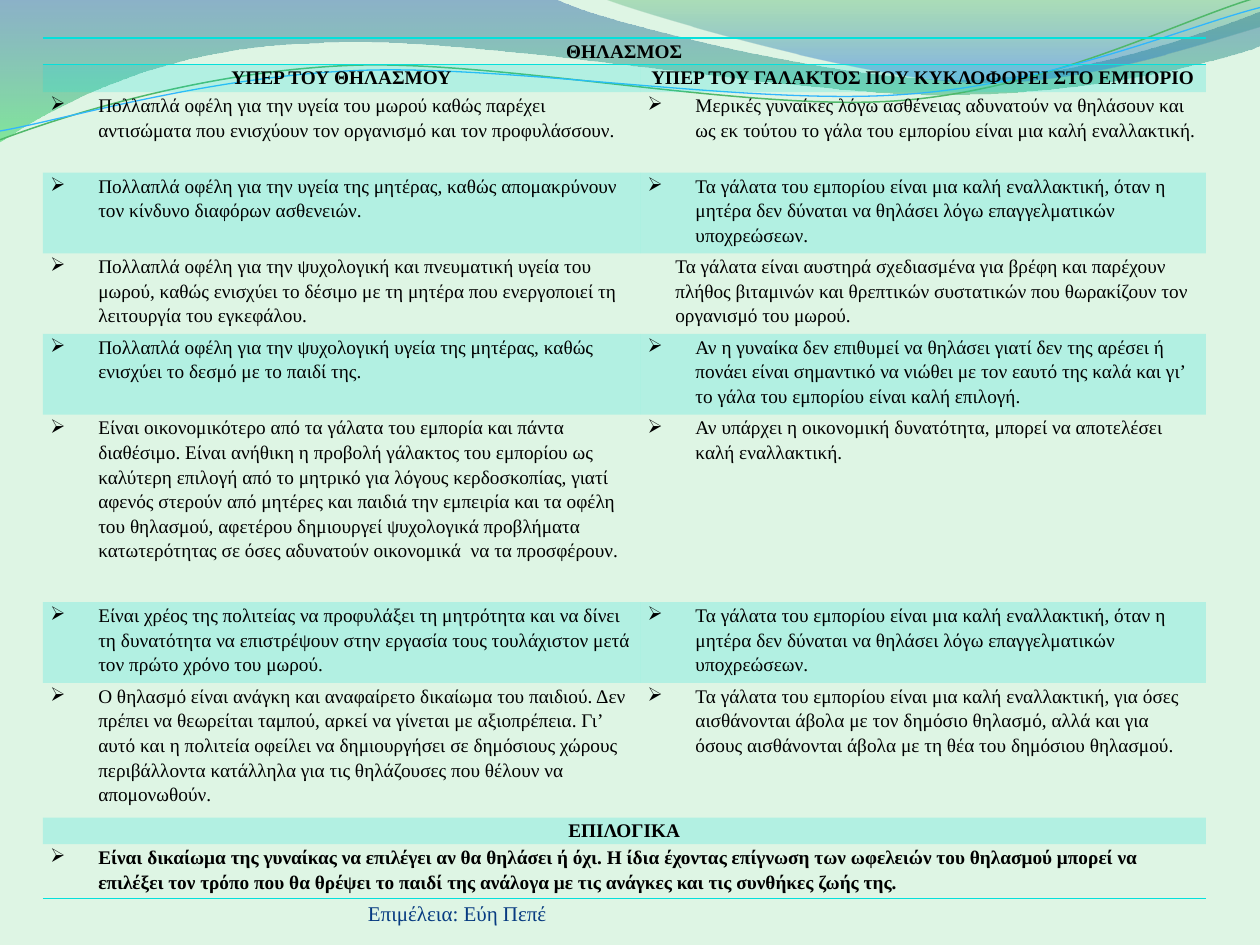
from pptx import Presentation, util as u
from pptx.dml.color import RGBColor
from pptx.enum import text
from pptx.oxml import parse_xml
from pptx.oxml.ns import nsdecls
from lxml import etree

FACE = "Times New Roman"
CYAN = "05E0DB"
NS = "{http://schemas.openxmlformats.org/drawingml/2006/main}"
PLAIN = "{2D5ABB26-0587-4C30-8999-92F81FD0307C}"  # no style, no grid

# Table rows: height, left text, right text (None = one merged cell)
ROWS = [
    (0.21, "ΘΗΛΑΣΜΟΣ", None),
    (0.22, "ΥΠΕΡ ΤΟΥ ΘΗΛΑΣΜΟΥ", "ΥΠΕΡ ΤΟΥ ΓΑΛΑΚΤΟΣ ΠΟΥ ΚΥΚΛΟΦΟΡΕΙ ΣΤΟ ΕΜΠΟΡΙΟ"),
    (0.64, "Πολλαπλά οφέλη για την υγεία του μωρού καθώς παρέχει αντισώματα που "
           "ενισχύουν τον οργανισμό και τον προφυλάσσουν.",
     "Μερικές γυναίκες λόγω ασθένειας αδυνατούν να θηλάσουν και ως εκ τούτου το "
     "γάλα του εμπορίου είναι μια καλή εναλλακτική."),
    (0.64, "Πολλαπλά οφέλη για την υγεία της μητέρας, καθώς απομακρύνουν τον "
           "κίνδυνο διαφόρων ασθενειών.",
     "Τα γάλατα του εμπορίου είναι μια καλή εναλλακτική, όταν η μητέρα δεν "
     "δύναται να θηλάσει λόγω επαγγελματικών υποχρεώσεων."),
    (0.64, "Πολλαπλά οφέλη για την ψυχολογική και πνευματική υγεία του μωρού, "
           "καθώς ενισχύει το δέσιμο με τη μητέρα που ενεργοποιεί τη λειτουργία "
           "του εγκεφάλου.",
     "Τα γάλατα είναι αυστηρά σχεδιασμένα για βρέφη και παρέχουν πλήθος βιταμινών "
     "και θρεπτικών συστατικών που θωρακίζουν τον οργανισμό του μωρού."),
    (0.64, "Πολλαπλά οφέλη για την ψυχολογική υγεία της μητέρας, καθώς ενισχύει "
           "το δεσμό με το παιδί της.",
     "Αν η γυναίκα δεν επιθυμεί να θηλάσει γιατί δεν της αρέσει ή πονάει είναι "
     "σημαντικό να νιώθει με τον εαυτό της καλά και γι’ το γάλα του εμπορίου "
     "είναι καλή επιλογή."),
    (1.49, "Είναι οικονομικότερο από τα γάλατα του εμπορία και πάντα διαθέσιμο. "
           "Είναι ανήθικη η προβολή γάλακτος του εμπορίου ως καλύτερη επιλογή από "
           "το μητρικό για λόγους κερδοσκοπίας, γιατί αφενός στερούν από μητέρες "
           "και παιδιά την εμπειρία και τα οφέλη του θηλασμού, αφετέρου δημιουργεί "
           "ψυχολογικά προβλήματα κατωτερότητας σε όσες αδυνατούν οικονομικά  να "
           "τα προσφέρουν.",
     "Αν υπάρχει η οικονομική δυνατότητα, μπορεί να αποτελέσει καλή εναλλακτική."),
    (0.64, "Είναι χρέος της πολιτείας να προφυλάξει τη μητρότητα και να δίνει τη "
           "δυνατότητα να επιστρέψουν στην εργασία τους τουλάχιστον μετά τον πρώτο "
           "χρόνο του μωρού.",
     "Τα γάλατα του εμπορίου είναι μια καλή εναλλακτική, όταν η μητέρα δεν "
     "δύναται να θηλάσει λόγω επαγγελματικών υποχρεώσεων."),
    (1.07, "Ο θηλασμό είναι ανάγκη και αναφαίρετο δικαίωμα του παιδιού. Δεν πρέπει "
           "να θεωρείται ταμπού, αρκεί να γίνεται με αξιοπρέπεια. Γι’ αυτό και η "
           "πολιτεία οφείλει να δημιουργήσει σε δημόσιους χώρους περιβάλλοντα "
           "κατάλληλα για τις θηλάζουσες που θέλουν να απομονωθούν.",
     "Τα γάλατα του εμπορίου είναι μια καλή εναλλακτική, για όσες αισθάνονται "
     "άβολα με τον δημόσιο θηλασμό, αλλά και για όσους αισθάνονται άβολα με τη "
     "θέα του δημόσιου θηλασμού."),
    (0.21, "ΕΠΙΛΟΓΙΚΑ", None),
    (0.43, "Είναι δικαίωμα της γυναίκας να επιλέγει αν θα θηλάσει ή όχι. Η ίδια "
           "έχοντας επίγνωση των ωφελειών του θηλασμού μπορεί να επιλέξει τον "
           "τρόπο που θα θρέψει το παιδί της ανάλογα με τις ανάγκες και τις "
           "συνθήκες ζωής της.", None),
]
HEADS = (0, 1, 9)
BOLD = HEADS + (10,)
NO_MARK = (4, 1)
TABBED = [(row, 0) for row in range(5, 9)]
EDGES = {0: ("lnT", "lnB"), 10: ("lnB",)}

# Waves: a pair is a straight step, six numbers are a curve
BANDS = [
    ([(0, 0), (4.4, -0.01), (4.76, 0.17, 6.64, 0.63, 7.58, 0.63),
      (8.53, 0.63, 9.58, 0.26, 10, 0.09), (10.01, 0.36),
      (9.83, 0.44, 8.7, 0.76, 7.46, 0.75), (6.22, 0.75, 3.82, 0.28, 2.57, 0.34),
      (1.29, 0.36, 0.46, 0.83, -0.01, 1.13), (0, 0)],
     [(0, "2960A7", 45), (1, "35DA5E", 55)]),
    ([(4.79, -0.01), (5.09, 0.11, 6.82, 0.62, 7.69, 0.65),
      (8.56, 0.69, 9.61, 0.32, 10, 0.21), (10, 0), (4.79, -0.01)],
     [(0, "36A752", 30), (0.8, "2472D3", 45)]),
]
LINES = [
    ([(0, 1.11), (0.48, 0.93, 1.58, 0.57, 2.77, 0.52),
      (3.95, 0.47, 5.93, 0.89, 7.13, 0.8), (8.33, 0.71, 9.38, 0.15, 9.98, -0.02)],
     "50B86A", 0.85),
    ([(0, 1.04), (0.47, 0.96, 1.64, 0.61, 2.83, 0.56),
      (4.03, 0.51, 5.97, 0.84, 7.17, 0.75), (8.36, 0.67, 9.41, 0.21, 10, 0.06)],
     "31B6FD", 0.75),
]


def color(code):
    return RGBColor.from_string(code)


def fade(node, part):
    """Set the opacity, in percent, of the colour inside a fill or stop."""
    etree.SubElement(node.find(f".//{NS}srgbClr"), NS + "alpha", val=str(part * 1000))


def wave(slide, steps, close):
    """Join the end points of the steps, then bend the curved ones."""
    dots = [[u.Inches(v) for v in step[-2:]] for step in steps]
    pen = slide.shapes.build_freeform(*dots[0])
    pen.add_line_segments(dots[1:], close=close)
    shape = pen.convert_to_shape()
    shape.shadow.inherit = False
    for node, step in zip(list(shape._element.spPr.iter(NS + "lnTo")), steps[1:]):
        if len(step) == 6:
            bend = etree.Element(NS + "cubicBezTo")
            for x, y in zip(step[::2], step[1::2]):
                etree.SubElement(bend, NS + "pt", x=str(u.Inches(x) - shape.left),
                                 y=str(u.Inches(y) - shape.top))
            node.getparent().replace(node, bend)
    return shape


def band(slide, steps, stops):
    shape = wave(slide, steps, True)
    shape.line.fill.background()
    shape.fill.gradient()
    shape.fill.gradient_angle = 270
    nodes = shape._element.spPr.iter(NS + "gs")
    for stop, node, (spot, code, part) in zip(shape.fill.gradient_stops, nodes, stops):
        stop.position = spot
        stop.color.rgb = color(code)
        fade(node, part)


def line(slide, steps, code, width):
    shape = wave(slide, steps, False)
    shape.fill.background()
    shape.line.color.rgb = color(code)
    shape.line.width = u.Pt(width)


def write(para, words, code, **style):
    run = para.add_run()
    run.text = words
    for key, value in {"name": FACE, **style}.items():
        setattr(run.font, key, value)
    run.font.color.rgb = color(code)


def inset(frame, side):
    for key, value in {"margin_left": side, "margin_right": side,
                       "margin_top": 0, "margin_bottom": 0}.items():
        setattr(frame, key, u.Inches(value))


def edge(cell, names):
    for i, name in enumerate(("lnL", "lnR", "lnT", "lnB")):
        paint = (f'<a:solidFill><a:srgbClr val="{CYAN}"/></a:solidFill>'
                 '<a:prstDash val="solid"/>' if name in names else "<a:noFill/>")
        cell._tc.get_or_add_tcPr().insert(i, parse_xml(
            f'<a:{name} {nsdecls("a")} w="12700" cmpd="sng">{paint}</a:{name}>'))


def fill(cell, shade):
    if shade:
        cell.fill.solid()
        cell.fill.fore_color.rgb = color(CYAN)
        fade(cell._tc.tcPr, 20)
    else:
        cell.fill.background()


def mark(props, tab):
    etree.SubElement(props, NS + "buFont", typeface="Wingdings", charset="2")
    etree.SubElement(props, NS + "buChar", char="Ø")
    if tab:
        tabs = etree.SubElement(props, NS + "tabLst")
        etree.SubElement(tabs, NS + "tab", pos=str(u.Inches(0.2)), algn="l")


def entry(cell, words, spot):
    para = cell.text_frame.paragraphs[0]
    para.line_spacing = 1.15
    props = para._p.get_or_add_pPr()
    if spot[0] in HEADS:
        para.alignment = text.PP_ALIGN.CENTER
    elif spot == NO_MARK:
        props.set("marL", str(u.Inches(0.22)))
    else:
        props.set("marL", str(u.Inches(0.38)))
        props.set("indent", str(-u.Inches(0.38)))
        mark(props, spot in TABBED)
    write(para, words, "000000", size=u.Pt(11), bold=spot[0] in BOLD)


def grid(slide):
    box = [u.Inches(v) for v in (0.34, 0.3, 9.23, 6.83)]
    table = slide.shapes.add_table(len(ROWS), 2, *box).table
    table._tbl.tblPr.find(NS + "tableStyleId").text = PLAIN
    table.first_row = table.horz_banding = False
    for col, width in zip(table.columns, (4.74, 4.49)):
        col.width = u.Inches(width)
    for r, (height, *pair) in enumerate(ROWS):
        table.rows[r].height = u.Inches(height)
        if pair[1] is None:
            table.cell(r, 0).merge(table.cell(r, 1))
        for c, words in enumerate(pair):
            cell = table.cell(r, c)
            inset(cell, 0.06)
            fill(cell, r % 2 == 1)
            if r in EDGES:
                edge(cell, EDGES[r])
            if words:
                entry(cell, words, (r, c))


def credit(slide):
    box = slide.shapes.add_textbox(*[u.Inches(v) for v in (2.92, 6.95, 3.67, 0.4)])
    frame = box.text_frame
    frame.word_wrap = True
    frame.vertical_anchor = text.MSO_ANCHOR.BOTTOM
    inset(frame, 0)
    write(frame.paragraphs[0], "Επιμέλεια: Εύη Πεπέ", "073B81", size=u.Pt(12))


def main():
    deck = Presentation()
    deck.slide_width, deck.slide_height = u.Inches(10), u.Inches(7.5)
    slide = deck.slides.add_slide(deck.slide_layouts[6])
    slide.background.fill.solid()
    slide.background.fill.fore_color.rgb = color("DEF5E4")
    # Waves along the top
    for item in BANDS:
        band(slide, *item)
    for item in LINES:
        line(slide, *item)
    # Credit and table
    credit(slide)
    grid(slide)
    deck.save("out.pptx")


if __name__ == "__main__":
    main()
